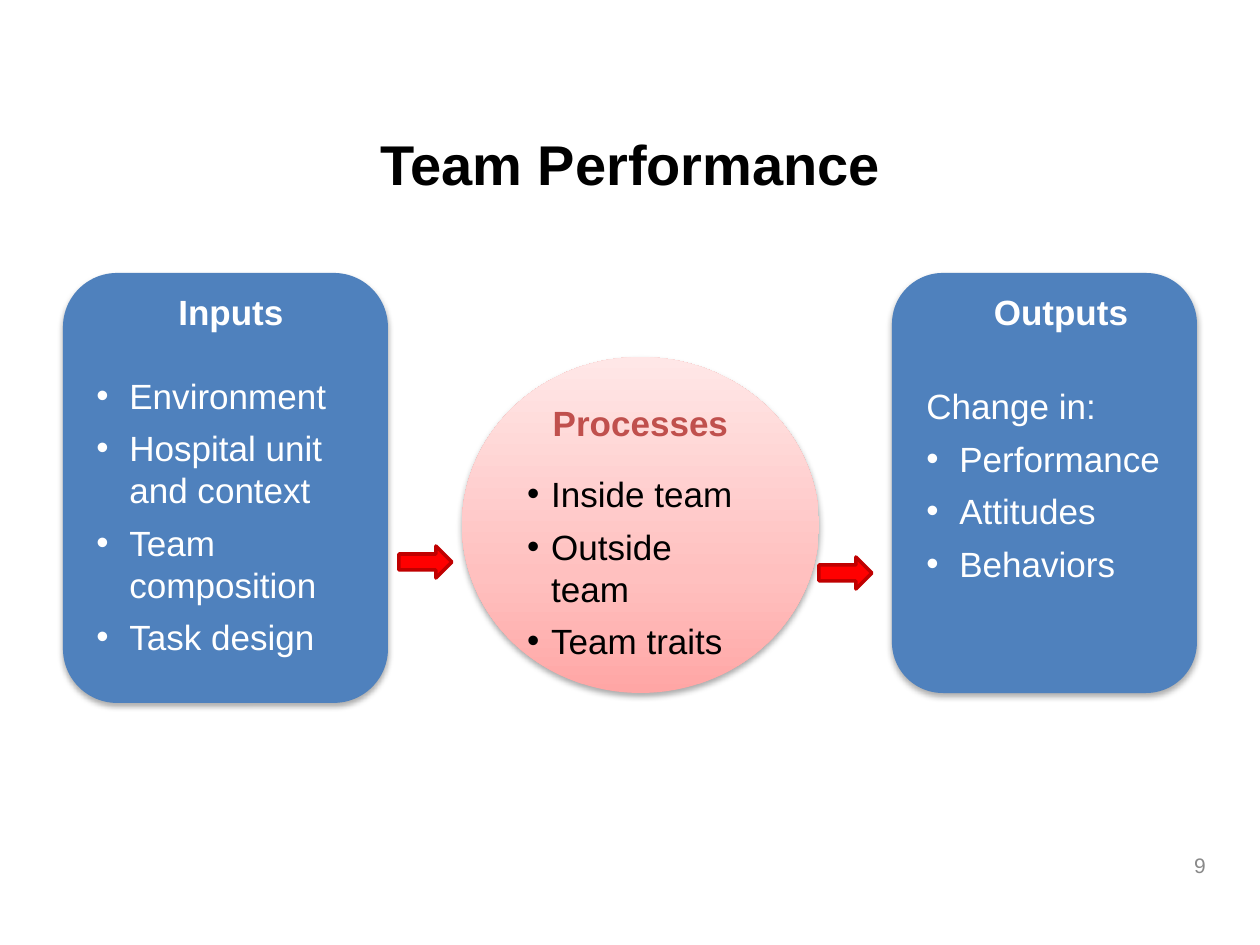
from copy import deepcopy
from dataclasses import dataclass

from lxml import etree
from pptx import Presentation
from pptx.dml.color import RGBColor
from pptx.enum import shapes, text
from pptx.oxml.ns import qn
from pptx.util import Pt

EMU_PER_PX = 914400 / 126
FONT = "Arial"
BLACK = RGBColor(0x00, 0x00, 0x00)
WHITE = RGBColor(0xFF, 0xFF, 0xFF)
GRAY = RGBColor(0x89, 0x89, 0x89)
BLUE = RGBColor(0x4F, 0x81, 0xBD)
RED = RGBColor(0xFF, 0x00, 0x00)
DARK_RED = RGBColor(0xC0, 0x00, 0x00)
BRICK = RGBColor(0xC0, 0x50, 0x4D)
PINK_STOPS = (
    (0, RGBColor(0xFF, 0xA6, 0xA5)),
    (0.35, RGBColor(0xFF, 0xC0, 0xBF)),
    (1, RGBColor(0xFF, 0xE7, 0xE7)),
)


@dataclass(frozen=True)
class Box:
    left: int
    top: int
    width: int
    height: int

    def emu(self) -> list[int]:
        lengths = (self.left, self.top, self.width, self.height)
        return [px(length) for length in lengths]


@dataclass(frozen=True)
class Line:
    """One paragraph; indent is the hanging indent of a bullet, 0 for none."""
    words: str
    color: RGBColor = WHITE
    size: int = 20
    bold: bool = False
    align: text.PP_ALIGN = text.PP_ALIGN.LEFT
    indent: int = 0
    after: int = 6


@dataclass(frozen=True)
class Panel:
    box: Box
    text_box: Box
    lines: list[Line]


def px(length: int) -> int:
    return round(length * EMU_PER_PX)


def heading(words: str, color: RGBColor, after: int) -> Line:
    return Line(words, color, bold=True, align=text.PP_ALIGN.CENTER, after=after)


def bullets(items: list[str], color: RGBColor, indent: int) -> list[Line]:
    return [Line(item, color, indent=indent) for item in items]


def write_lines(text_frame, lines: list[Line]) -> None:
    text_frame.word_wrap = True
    text_frame.text = "\n".join(line.words for line in lines)
    for paragraph, line in zip(text_frame.paragraphs, lines):
        paragraph.alignment = line.align
        paragraph.space_after = Pt(line.after)
        if line.indent:
            properties = paragraph._p.get_or_add_pPr()
            properties.set("marL", str(px(line.indent)))
            properties.set("indent", str(-px(line.indent)))
            etree.SubElement(properties, qn("a:buFont"), typeface=FONT)
            etree.SubElement(properties, qn("a:buChar"), char="•")
        font = paragraph.runs[0].font
        font.name = FONT
        font.size = Pt(line.size)
        font.bold = line.bold
        font.color.rgb = line.color


def add_text(slide, box: Box, lines: list[Line],
             anchor=text.MSO_ANCHOR.TOP) -> None:
    text_frame = slide.shapes.add_textbox(*box.emu()).text_frame
    text_frame.vertical_anchor = anchor
    write_lines(text_frame, lines)


def add_soft_shadow(shape) -> None:
    shape.shadow.inherit = False
    effects = shape._element.spPr.find(qn("a:effectLst"))
    shadow = etree.SubElement(
        effects, qn("a:outerShdw"), blurRad=str(Pt(3.5)), dist=str(Pt(2.2)),
        dir="5400000", rotWithShape="0")
    color = etree.SubElement(shadow, qn("a:srgbClr"), val=str(BLACK))
    etree.SubElement(color, qn("a:alpha"), val="32000")


def add_panel(slide, panel: Panel) -> None:
    shape = slide.shapes.add_shape(
        shapes.MSO_SHAPE.ROUNDED_RECTANGLE, *panel.box.emu())
    shape.fill.solid()
    shape.fill.fore_color.rgb = BLUE
    shape.line.fill.background()
    add_soft_shadow(shape)
    add_text(slide, panel.text_box, panel.lines)


def add_process_circle(slide, box: Box, lines: list[Line]) -> None:
    circle = slide.shapes.add_shape(shapes.MSO_SHAPE.OVAL, *box.emu())
    circle.fill.gradient()
    circle.fill.gradient_angle = 90
    stop_list = circle._element.spPr.find(".//" + qn("a:gsLst"))
    stop_list.append(deepcopy(stop_list[0]))
    for stop, (position, color) in zip(circle.fill.gradient_stops, PINK_STOPS):
        stop.position = position
        stop.color.rgb = color
    circle.line.fill.background()
    add_soft_shadow(circle)
    text_frame = circle.text_frame
    text_frame.vertical_anchor = text.MSO_ANCHOR.MIDDLE
    text_frame.margin_left = text_frame.margin_right = px(13)
    text_frame.margin_top = px(19)
    text_frame.margin_bottom = px(6)
    write_lines(text_frame, lines)


def add_arrow(slide, box: Box) -> None:
    arrow = slide.shapes.add_shape(shapes.MSO_SHAPE.RIGHT_ARROW, *box.emu())
    arrow.shadow.inherit = False
    arrow.fill.solid()
    arrow.fill.fore_color.rgb = RED
    arrow.line.color.rgb = DARK_RED
    arrow.line.width = Pt(2)


INPUTS = Panel(
    Box(63, 273, 325, 430), Box(84, 284, 294, 384),
    [heading("Inputs", WHITE, 24)]
    + bullets(["Environment", "Hospital unit and context",
               "Team composition", "Task design"], WHITE, 33))
OUTPUTS = Panel(
    Box(892, 273, 305, 420), Box(914, 284, 294, 384),
    [heading("Outputs", WHITE, 30), Line("Change in:")]
    + bullets(["Performance", "Attitudes", "Behaviors"], WHITE, 33))
PROCESSES = [heading("Processes", BRICK, 17)] + bullets(
    ["Inside team", "Outside team", "Team traits"], BLACK, 24)
ARROWS = [Box(399, 546, 53, 32), Box(819, 557, 53, 32)]


def main() -> None:
    presentation = Presentation()
    presentation.slide_width = px(1260)
    presentation.slide_height = px(945)
    slide = presentation.slides.add_slide(presentation.slide_layouts[6])

    title = Line("Team Performance", BLACK, 32, True, text.PP_ALIGN.CENTER, after=0)
    add_text(slide, Box(53, 84, 1155, 158), [title], text.MSO_ANCHOR.MIDDLE)
    number = Line("9", GRAY, 12, align=text.PP_ALIGN.RIGHT, after=0)
    add_text(slide, Box(924, 840, 294, 50), [number], text.MSO_ANCHOR.MIDDLE)

    for panel in (OUTPUTS, INPUTS):
        add_panel(slide, panel)
    add_process_circle(slide, Box(462, 357, 357, 336), PROCESSES)
    for box in ARROWS:
        add_arrow(slide, box)

    presentation.save("out.pptx")


if __name__ == "__main__":
    main()
